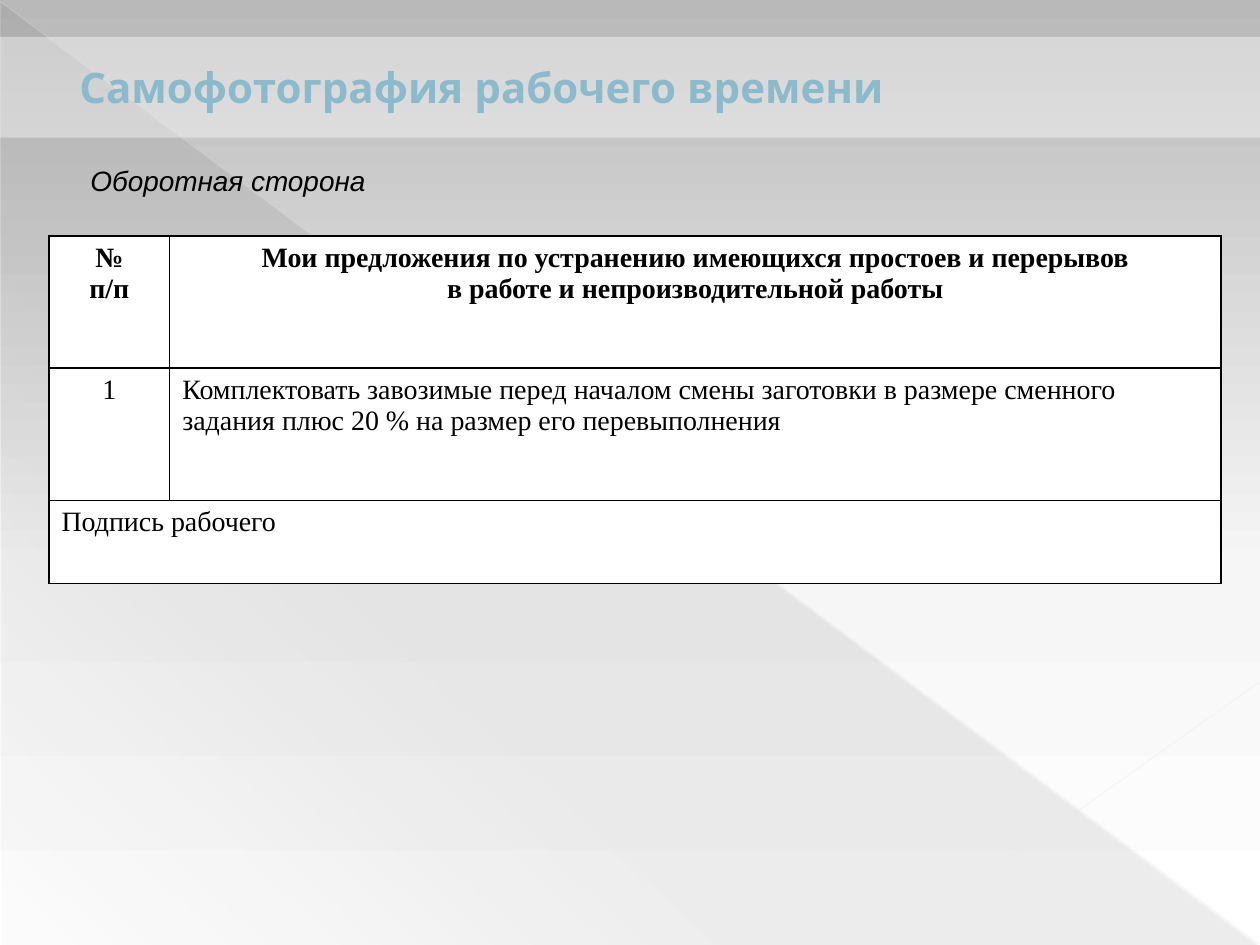
from lxml.etree import SubElement
from pptx import Presentation
from pptx.dml.color import RGBColor
from pptx.enum.shapes import MSO_CONNECTOR, MSO_SHAPE
from pptx.enum.text import MSO_ANCHOR, MSO_AUTO_SIZE, PP_ALIGN
from pptx.oxml.ns import qn
from pptx.util import Pt

COLORS = {
    "title": "8ABACB", "title outline": "4C6F7A", "text": "000000",
    "white": "FFFFFF", "border": "000000", "shade": "3B3B3B",
    "diagonal": "EAE8E6", "corner": "ECEAE8",
    "sky top": "B9B9B9", "sky middle": "F6F6F6",
}
TITLE = "Самофотография рабочего времени"
SUBTITLE = "Оборотная сторона"
HEADER = ["№\nп/п",
          "Мои предложения по устранению имеющихся простоев и перерывов\n"
          "в работе и непроизводительной работы"]
PROPOSAL = ["1",
            "Комплектовать завозимые перед началом смены заготовки в размере сменного\n"
            "задания плюс 20 % на размер его перевыполнения"]
SIGNATURE = ["Подпись рабочего", ""]
ROWS = [HEADER, PROPOSAL, SIGNATURE]
COLUMN_WIDTHS = [69, 600.6]
ROW_HEIGHTS = [75.6, 75.6, 47.5]

# position %, colour name, opacity %
BACKGROUND_STOPS = [(0, "sky top", 100), (60, "sky middle", 100), (100, "white", 100)]
SHADE_STOPS = [(0, "shade", 10), (70, "shade", 8), (100, "shade", 1)]
# start, end, colour name, width, opacity %
LINES = [((0, 0.7), (719.3, 539.3), "diagonal", 0.39, 35),
         ((720, 389.5), (509, 539.3), "corner", 0.47, 45)]


def color(name):
    return RGBColor.from_string(COLORS[name])


def set_opacity(element, percent):
    """Make the first RGB colour inside the element partly transparent."""
    rgb = next(element.iter(qn("a:srgbClr")))
    SubElement(rgb, qn("a:alpha"), val=str(percent * 1000))


def set_gradient(fill, element, stops, angle):
    """Give the fill any number of stops; angle is clockwise in degrees."""
    fill.gradient()
    gradient = next(element.iter(qn("a:gradFill")))
    for child in list(gradient):
        gradient.remove(child)
    stop_list = SubElement(gradient, qn("a:gsLst"))
    for position, name, opacity in stops:
        stop = SubElement(stop_list, qn("a:gs"), pos=str(position * 1000))
        SubElement(stop, qn("a:srgbClr"), val=COLORS[name])
        set_opacity(stop, opacity)
    SubElement(gradient, qn("a:lin"), ang=str(angle * 60000), scaled="0")


def add_solid(parent, name):
    solid = SubElement(parent, qn("a:solidFill"))
    SubElement(solid, qn("a:srgbClr"), val=COLORS[name])


def format_font(font, name, size, color_name, bold=False, italic=False):
    font.name, font.size = name, Pt(size)
    font.bold, font.italic = bold, italic
    font.color.rgb = color(color_name)


def add_backdrop(page):
    set_gradient(page.background.fill, page.element, BACKGROUND_STOPS, 90)
    triangle = page.shapes.add_shape(
        MSO_SHAPE.RIGHT_TRIANGLE, Pt(0.7), Pt(1.4), Pt(718.6), Pt(538.6))
    triangle.shadow.inherit = False
    triangle.line.fill.background()
    set_gradient(triangle.fill, triangle.element, SHADE_STOPS, 133)
    for start, end, name, width, opacity in LINES:
        line = page.shapes.add_connector(
            MSO_CONNECTOR.STRAIGHT, *map(Pt, start + end))
        line.line.color.rgb = color(name)
        line.line.width = Pt(width)
        set_opacity(line.element, opacity)
        SubElement(line.element.spPr, qn("a:effectLst"))


def add_title(page):
    title = page.shapes.title
    page.shapes.element.append(title.element)  # in front of the backdrop
    title.left, title.top, title.width, title.height = Pt(0), Pt(21), Pt(720), Pt(57.6)
    title.fill.solid()
    title.fill.fore_color.rgb = color("white")
    set_opacity(title.element, 40)
    frame = title.text_frame
    frame.text = TITLE
    frame.vertical_anchor = MSO_ANCHOR.MIDDLE
    frame.margin_left = Pt(45.4)
    paragraph = frame.paragraphs[0]
    paragraph.alignment = PP_ALIGN.LEFT
    format_font(paragraph.font, "League Spartan", 24, "title", bold=True)
    properties = paragraph.runs[0].font._element
    outline = SubElement(properties, qn("a:ln"), w=str(Pt(0.5)))
    add_solid(outline, "title outline")


def add_subtitle(page):
    box = page.shapes.add_textbox(Pt(44.6), Pt(90), Pt(261.4), Pt(46))
    frame = box.text_frame
    frame.word_wrap = True
    frame.auto_size = MSO_AUTO_SIZE.NONE
    frame.vertical_anchor = MSO_ANCHOR.TOP
    frame.text = SUBTITLE
    format_font(frame.paragraphs[0].font, "Arial", 16, "text", italic=True)


def format_cell(cell, text, bold, centered):
    properties = cell._tc.get_or_add_tcPr()
    for side in ("a:lnL", "a:lnR", "a:lnT", "a:lnB"):
        add_solid(SubElement(properties, qn(side), w=str(Pt(1))), "border")
    cell.fill.solid()
    cell.fill.fore_color.rgb = color("white")
    cell.text = text
    for paragraph in cell.text_frame.paragraphs:
        paragraph.alignment = PP_ALIGN.CENTER if centered else PP_ALIGN.LEFT
        format_font(paragraph.font, "Times New Roman", 16, "text", bold=bold)


def add_proposals(page):
    table = page.shapes.add_table(
        len(ROWS), len(COLUMN_WIDTHS), Pt(28), Pt(134.8),
        Pt(sum(COLUMN_WIDTHS)), Pt(sum(ROW_HEIGHTS))).table
    for column, width in zip(table.columns, COLUMN_WIDTHS):
        column.width = Pt(width)
    for row, height in zip(table.rows, ROW_HEIGHTS):
        row.height = Pt(height)
    for row, texts in enumerate(ROWS):
        is_header = texts is HEADER
        for column, text in enumerate(texts):
            is_number = column == 0 and texts is PROPOSAL
            format_cell(table.cell(row, column), text, is_header, is_header or is_number)
    last = len(ROWS) - 1
    table.cell(last, 0).merge(table.cell(last, 1))


def main():
    deck = Presentation()
    deck.slide_width, deck.slide_height = Pt(720), Pt(540)
    page = deck.slides.add_slide(deck.slide_layouts[5])
    add_backdrop(page)
    add_title(page)
    add_subtitle(page)
    add_proposals(page)
    deck.save("out.pptx")


if __name__ == "__main__":
    main()
